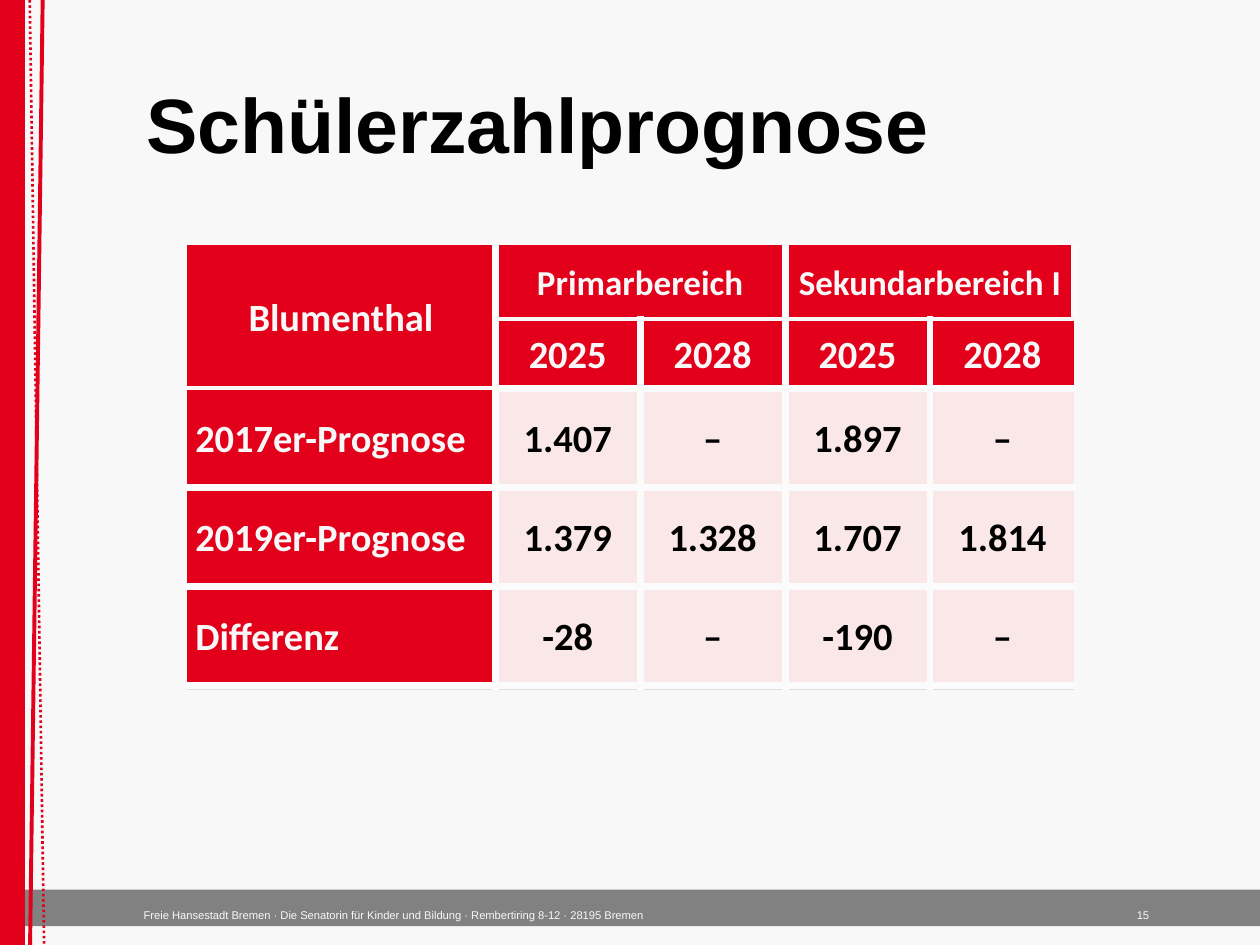
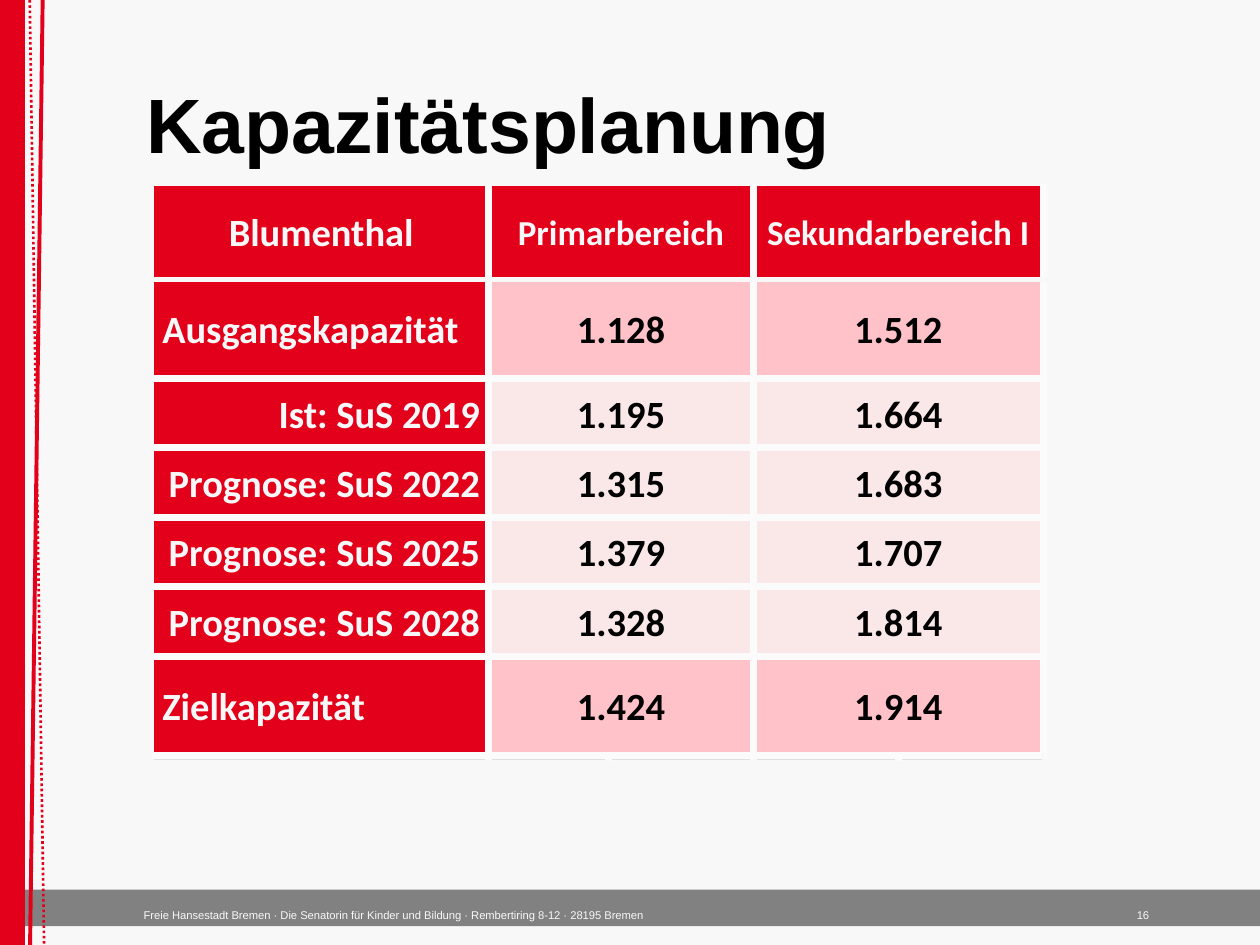
"""Build two slides on pupil forecasts and school capacity in Blumenthal."""
from dataclasses import dataclass
from typing import Optional

from lxml.etree import SubElement
from pptx import Presentation
from pptx.dml.color import RGBColor
from pptx.enum.dml import MSO_LINE
from pptx.enum.shapes import MSO_CONNECTOR, MSO_SHAPE
from pptx.enum.text import MSO_ANCHOR, MSO_AUTO_SIZE, PP_ALIGN
from pptx.oxml.ns import qn
from pptx.util import Pt

LEFT, CENTER, RIGHT = PP_ALIGN.LEFT, PP_ALIGN.CENTER, PP_ALIGN.RIGHT
TOP, MIDDLE = MSO_ANCHOR.TOP, MSO_ANCHOR.MIDDLE
RECTANGLE, STRAIGHT = MSO_SHAPE.RECTANGLE, MSO_CONNECTOR.STRAIGHT
DOTTED = MSO_LINE.ROUND_DOT

RED = RGBColor(0xE2, 0x00, 0x1A)
PINK = RGBColor(0xFF, 0xC2, 0xC9)
PALE = RGBColor(0xFA, 0xE7, 0xE7)
PAPER = RGBColor(0xF8, 0xF8, 0xF8)
GRID = RGBColor(0xFB, 0xFB, 0xFB)
CHARCOAL = RGBColor(0x33, 0x33, 0x33)
SILVER = RGBColor(0xDF, 0xDF, 0xDF)
BLACK = RGBColor(0x00, 0x00, 0x00)

WIDTH, HEIGHT = 720, 540
FOOTER_TOP, FOOTER_HEIGHT = 508.3, 20.9
FOOTER = ("Freie Hansestadt Bremen · Die Senatorin für Kinder und Bildung · "
          "Rembertiring 8-12 · 28195 Bremen")
CLOSING_HEIGHT = 2.9
OUTER, THIN, THICK = (PAPER, 1), (PAPER, 3), (GRID, 4.5)


@dataclass
class Stripe:
    """A slanted red line from the top to the bottom edge."""
    top_x: float
    bottom_x: float
    weight: float
    dotted: bool = False


@dataclass
class Row:
    """A table row; None continues the cell to the left, or above in column 0."""
    height: float
    texts: list[Optional[str]]
    fill: RGBColor = PALE
    label_align: PP_ALIGN = LEFT


@dataclass
class Sheet:
    """One slide with its title, number and table."""
    title: str
    number: int
    left: float
    top: float
    columns: list[float]
    rows: list[Row]


def pair_row(height: float, label: str, primary: str, secondary: str,
             fill: RGBColor = PALE, label_align: PP_ALIGN = LEFT) -> Row:
    """Return a row whose two values each span two columns."""
    return Row(height, [label, primary, None, secondary, None], fill, label_align)


STRIPES = [Stripe(24.4, 17.2, 2.25), Stripe(17, 25.2, 1.5, True)]
SHEETS = [
    Sheet("Schülerzahlprognose", 15, 106.6, 139.7, [176.4] + [82.8] * 4, [
        pair_row(42.5, "Blumenthal", "Primarbereich", "Sekundarbereich I", RED, CENTER),
        Row(39.6, [None, "2025", "2028", "2025", "2028"], RED),
        Row(56.7, ["2017er-Prognose", "1.407", "–", "1.897", "–"]),
        Row(56.7, ["2019er-Prognose", "1.379", "1.328", "1.707", "1.814"]),
        Row(56.7, ["Differenz", "-28", "–", "-190", "–"]),
    ]),
    Sheet("Kapazitätsplanung", 16, 87.8, 105.6, [191.5, 68.4] + [82.8] * 3, [
        pair_row(54, "Blumenthal", "Primarbereich", "Sekundarbereich I", RED, CENTER),
        pair_row(56.7, "Ausgangskapazität", "1.128", "1.512", PINK),
        pair_row(39.7, "Ist: SuS 2019", "1.195", "1.664", label_align=RIGHT),
        pair_row(39.7, "Prognose: SuS 2022", "1.315", "1.683", label_align=RIGHT),
        pair_row(39.7, "Prognose: SuS 2025", "1.379", "1.707", label_align=RIGHT),
        pair_row(39.7, "Prognose: SuS 2028", "1.328", "1.814", label_align=RIGHT),
        pair_row(56.7, "Zielkapazität", "1.424", "1.914", PINK),
    ]),
]


def write_text(frame, text: str, *, size: float, color: RGBColor, font: str = "Arial",
               bold: bool = False, align: PP_ALIGN = LEFT, spacing: float = 1,
               baseline: int = 0) -> None:
    """Write one formatted paragraph into a text frame."""
    para = frame.paragraphs[0]
    para.alignment = align
    para.line_spacing = spacing
    para.space_before = Pt(0)
    span = para.add_run()
    span.text = text
    span.font.name = font
    span.font.size = Pt(size)
    span.font.bold = bold
    span.font.color.rgb = color
    if baseline:
        span._r.get_or_add_rPr().set("baseline", str(baseline * 1000))


def set_insets(holder, left: float, top: float, right: float, bottom: float) -> None:
    """Set the inner margins of a text frame or a table cell."""
    holder.margin_left, holder.margin_right = Pt(left), Pt(right)
    holder.margin_top, holder.margin_bottom = Pt(top), Pt(bottom)


def add_bar(page, left: float, top: float, width: float, height: float, color: RGBColor):
    """Add a plain filled rectangle."""
    bar = page.shapes.add_shape(RECTANGLE, Pt(left), Pt(top), Pt(width), Pt(height))
    bar.shadow.inherit = False
    bar.fill.solid()
    bar.fill.fore_color.rgb = color
    bar.line.fill.background()
    return bar


def add_stripe(page, stripe: Stripe) -> None:
    """Add one slanted line at the left edge."""
    line = page.shapes.add_connector(STRAIGHT, Pt(stripe.top_x), Pt(0),
                                     Pt(stripe.bottom_x), Pt(HEIGHT))
    line.line.color.rgb = RED
    line.line.width = Pt(stripe.weight)
    if stripe.dotted:
        line.line.dash_style = DOTTED
    SubElement(line.element.spPr, qn("a:effectLst"))


def write_footer(frame, text: str, align: PP_ALIGN, left_inset: float) -> None:
    """Write a small line into the footer band."""
    frame.word_wrap = True
    frame.vertical_anchor = TOP
    set_insets(frame, left_inset, 3.6, 7.2, 3.6)
    write_text(frame, text, size=11, color=PAPER, align=align, baseline=-25)


def add_frame(page, number: int) -> None:
    """Draw the footer band, the red edge and the page number."""
    band = add_bar(page, 0, FOOTER_TOP, WIDTH, FOOTER_HEIGHT, CHARCOAL)
    tint = next(band.element.iter(qn("a:srgbClr")))
    SubElement(tint, qn("a:alpha"), val="60000")
    write_footer(band.text_frame, FOOTER, LEFT, 82.1)
    solid, dotted = STRIPES
    add_stripe(page, solid)
    add_bar(page, 0, 0, 14.2, HEIGHT, RED)
    add_stripe(page, dotted)
    box = page.shapes.add_textbox(Pt(586.8), Pt(FOOTER_TOP), Pt(77), Pt(FOOTER_HEIGHT))
    write_footer(box.text_frame, str(number), RIGHT, 7.2)


def set_title(page, text: str) -> None:
    """Place and format the title placeholder."""
    title = page.shapes.title
    title.left, title.top = Pt(76.3), Pt(31.7)
    title.width, title.height = Pt(606.2), Pt(83.5)
    frame = title.text_frame
    frame.auto_size = MSO_AUTO_SIZE.NONE
    frame.vertical_anchor = MIDDLE
    write_text(frame, text, size=44, color=BLACK, bold=True, spacing=0.9)


def style_cell(cell, fill: RGBColor, edges: dict[str, tuple[RGBColor, float]]) -> None:
    """Set the borders, fill, margins and anchor of a cell."""
    properties = cell._tc.get_or_add_tcPr()
    for side, (color, weight) in edges.items():
        line = SubElement(properties, qn(f"a:ln{side}"), w=str(Pt(weight)))
        paint = SubElement(line, qn("a:solidFill"))
        SubElement(paint, qn("a:srgbClr"), val=str(color))
    cell.fill.solid()
    cell.fill.fore_color.rgb = fill
    cell.vertical_anchor = MIDDLE
    set_insets(cell, 5, 0, 5, 0)


def add_table(page, sheet: Sheet) -> None:
    """Add the table of a slide, closed by a narrow empty row."""
    closing = Row(CLOSING_HEIGHT, [""] * len(sheet.columns), SILVER)
    rows = sheet.rows + [closing]
    height = sum(row.height for row in rows)
    table = page.shapes.add_table(len(rows), len(sheet.columns), Pt(sheet.left),
                                  Pt(sheet.top), Pt(sum(sheet.columns)), Pt(height)).table
    table.first_row = table.horz_banding = False
    for column, width in zip(table.columns, sheet.columns):
        column.width = Pt(width)
    last_row, last_column = len(rows) - 1, len(sheet.columns) - 1
    for r, row in enumerate(rows):
        table.rows[r].height = Pt(row.height)
        for c, text in enumerate(row.texts):
            cell = table.cell(r, c)
            header_above = r == 1 or (c == 0 and rows[r - 1].fill == RED)
            header_end = r == 0 or (c == 0 and row.fill == RED)
            is_label = c == 0 and r < last_row
            fill = RED if is_label else row.fill
            style_cell(cell, fill, {
                "L": THICK if c else OUTER,
                "R": THICK if c < last_column else OUTER,
                "T": OUTER if r == 0 else THIN if header_above else THICK,
                "B": OUTER if r == last_row else THIN if header_end else THICK,
            })
            if text:
                write_text(cell.text_frame, text, font="Calibri", bold=True, spacing=1.07,
                           size=20 if r == 0 and c else 22,
                           color=PAPER if fill == RED else BLACK,
                           align=row.label_align if is_label else CENTER)
            else:
                SubElement(cell.text_frame.paragraphs[0]._p, qn("a:endParaRPr"), sz="100")
    for r, row in enumerate(rows):
        for c, text in enumerate(row.texts):
            if text is None:
                origin = table.cell(r, c - 1) if c else table.cell(r - 1, c)
                origin.merge(table.cell(r, c))


def main() -> None:
    """Build and save the deck."""
    deck = Presentation()
    deck.slide_width, deck.slide_height = Pt(WIDTH), Pt(HEIGHT)
    background = deck.slide_master.background.fill
    background.solid()
    background.fore_color.rgb = PAPER
    title_only = deck.slide_layouts.get_by_name("Title Only")
    for sheet in SHEETS:
        page = deck.slides.add_slide(title_only)
        add_frame(page, sheet.number)
        set_title(page, sheet.title)
        add_table(page, sheet)
    deck.save("out.pptx")


if __name__ == "__main__":
    main()
